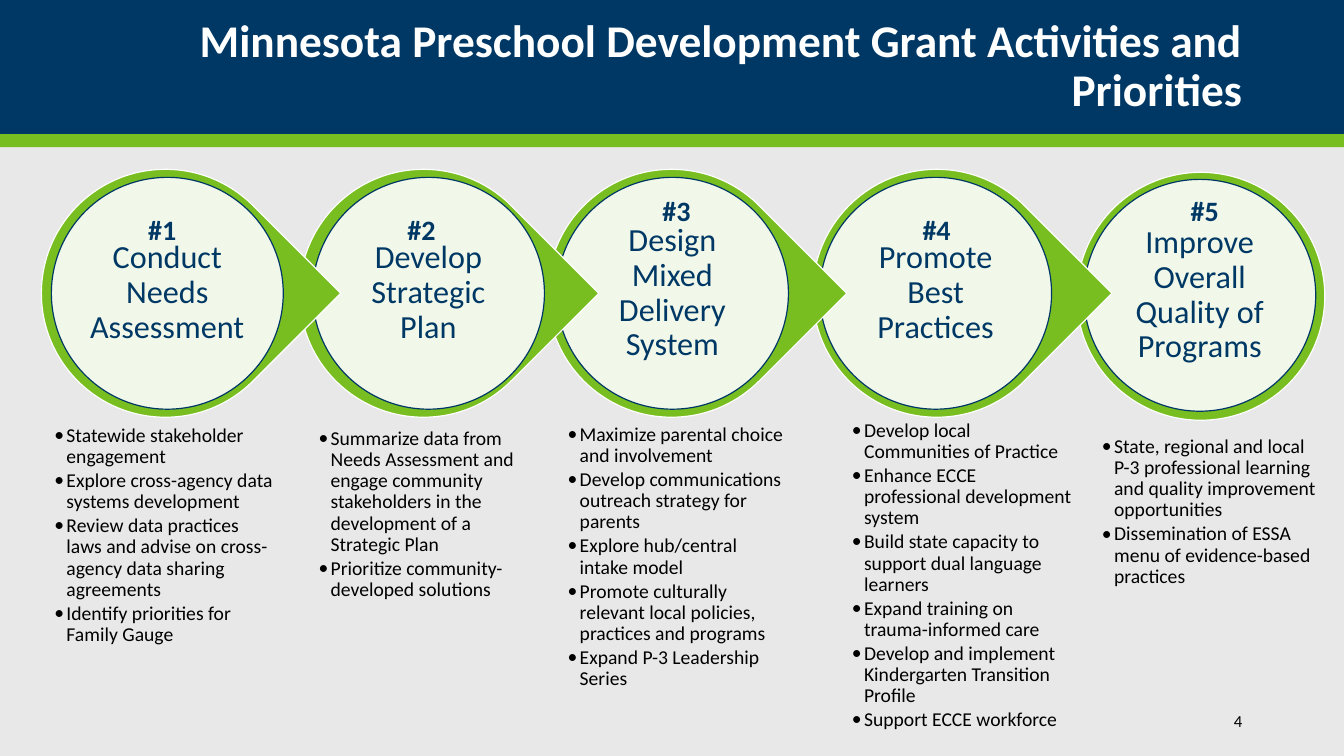
from dataclasses import dataclass

from lxml import etree
from pptx import Presentation
from pptx.dml.color import RGBColor
from pptx.enum import shapes, text
from pptx.oxml import ns
from pptx.util import Inches, Pt


@dataclass(frozen=True)
class Theme:
    font: str = "Calibri"
    navy: RGBColor = RGBColor.from_string("003865")
    green: RGBColor = RGBColor.from_string("78BE21")
    white: RGBColor = RGBColor.from_string("FFFFFF")
    black: RGBColor = RGBColor.from_string("000000")
    background: RGBColor = RGBColor.from_string("E8E8E8")
    title_size: float = 32.4
    label_size: float = 23
    number_size: float = 20
    bullet_size: float = 14
    page_size: float = 12
    outline: float = 0.85


theme = Theme()
presentation = Presentation()
presentation.slide_width = Inches(13.33)
presentation.slide_height = Inches(7.5)
slide = presentation.slides.add_slide(presentation.slide_layouts[5])
slide.background.fill.solid()
slide.background.fill.fore_color.rgb = theme.background


def add_filled(preset, left, top, width, height, fill, line=None):
    shape = slide.shapes.add_shape(
        preset, Inches(left), Inches(top), Inches(width), Inches(height))
    shape.shadow.inherit = False
    shape.fill.solid()
    shape.fill.fore_color.rgb = fill
    if line is None:
        shape.line.fill.background()
    else:
        shape.line.color.rgb = line
        shape.line.width = Pt(theme.outline)
    return shape


def write_text(shape, lines, size, color, bold=False, margins=(0.1, 0.05),
               anchor=text.MSO_ANCHOR.TOP, **paragraph_format):
    frame = shape.text_frame
    side, edge = (Inches(margin) for margin in margins)
    frame_format = {
        "word_wrap": True, "auto_size": text.MSO_AUTO_SIZE.NONE,
        "vertical_anchor": anchor, "margin_left": side, "margin_right": side,
        "margin_top": edge, "margin_bottom": edge,
    }
    for name, value in frame_format.items():
        setattr(frame, name, value)
    frame.text = "\n".join(lines)
    for paragraph in frame.paragraphs:
        for name, value in paragraph_format.items():
            setattr(paragraph, name, value)
        font = paragraph.runs[0].font
        for name, value in {"name": theme.font, "size": Pt(size), "bold": bold}.items():
            setattr(font, name, value)
        font.color.rgb = color


title = slide.shapes.title
for top, height, color in [(0, 1.33, theme.navy), (1.33, 0.13, theme.green)]:
    band = add_filled(shapes.MSO_SHAPE.RECTANGLE, 0, top, 13.33, height, color)
    title.element.addprevious(band.element)

title_place = {"left": 0.14, "top": 0.17, "width": 12.28, "height": 1}
for name, value in title_place.items():
    setattr(title, name, Inches(value))
write_text(title, ["Minnesota Preschool Development Grant Activities and Priorities"],
           theme.title_size, theme.white, bold=True, anchor=text.MSO_ANCHOR.MIDDLE,
           alignment=text.PP_ALIGN.RIGHT, line_spacing=0.9)

page_number = slide.shapes.add_textbox(Inches(10.82), Inches(6.95), Inches(1.6), Inches(0.4))
write_text(page_number, ["4"], theme.page_size, theme.black,
           anchor=text.MSO_ANCHOR.MIDDLE, alignment=text.PP_ALIGN.RIGHT)

teardrop, oval = shapes.MSO_SHAPE.TEAR, shapes.MSO_SHAPE.OVAL
stages = [
    {"label": "Conduct Needs Assessment", "preset": teardrop, "ring": (0.41, 1.68),
     "disc": (0.51, 1.76), "list": (0.48, 4.16), "number": (1.18, 2.06),
     "bullets": ["Statewide stakeholder engagement",
                 "Explore cross-agency data systems development",
                 "Review data practices laws and advise on cross-agency data sharing agreements",
                 "Identify priorities for Family Gauge"]},
    {"label": "Develop Strategic Plan", "preset": teardrop, "ring": (2.97, 1.68),
     "disc": (3.1, 1.76), "list": (3.1, 4.19), "number": (3.75, 2.06),
     "bullets": ["Summarize data from Needs Assessment and engage community stakeholders "
                 "in the development of a Strategic Plan",
                 "Prioritize community-developed solutions"]},
    {"label": "Design Mixed Delivery System", "preset": teardrop, "ring": (5.43, 1.68),
     "disc": (5.52, 1.76), "list": (5.57, 4.15), "number": (6.28, 1.87),
     "bullets": ["Maximize parental choice and involvement",
                 "Develop communications outreach strategy for parents",
                 "Explore hub/central intake model",
                 "Promote culturally relevant local policies, practices and programs",
                 "Expand P-3 Leadership Series"]},
    {"label": "Promote Best Practices", "preset": teardrop, "ring": (8.06, 1.68),
     "disc": (8.13, 1.76), "list": (8.39, 4.11), "number": (8.86, 2.06),
     "bullets": ["Develop local Communities of Practice",
                 "Enhance ECCE professional development system",
                 "Build state capacity to support dual language learners",
                 "Expand training on trauma-informed care",
                 "Develop and implement Kindergarten Transition Profile",
                 "Support ECCE workforce"]},
    {"label": "Improve Overall Quality of Programs", "preset": oval, "ring": (10.68, 1.71),
     "disc": (10.75, 1.78), "list": (10.87, 4.27), "number": (11.52, 1.87),
     "bullets": ["State, regional and local P-3 professional learning and quality "
                 "improvement opportunities",
                 "Dissemination of ESSA menu of evidence-based practices"]},
]

for stage in reversed(stages):
    ring = add_filled(stage["preset"], *stage["ring"], 2.46, 2.46, theme.green, theme.white)
    ring.rotation = 45 if stage["preset"] == teardrop else 0

    disc = add_filled(oval, *stage["disc"], 2.3, 2.3, theme.white, theme.navy)
    disc_color = disc.element.spPr.find(ns.qn("a:solidFill"))[0]
    etree.SubElement(disc_color, ns.qn("a:alpha"), val="90000")

    left, top = (Inches(offset + 0.33) for offset in stage["disc"])
    label = slide.shapes.add_textbox(left, top, Inches(1.64), Inches(1.64))
    write_text(label, [stage["label"]], theme.label_size, theme.navy, margins=(0.03, 0.03),
               anchor=text.MSO_ANCHOR.MIDDLE, alignment=text.PP_ALIGN.CENTER, line_spacing=0.9)

    left, top = map(Inches, stage["list"])
    activities = slide.shapes.add_textbox(left, top, Inches(2.3), Inches(1.35))
    write_text(activities, stage["bullets"], theme.bullet_size, theme.black,
               margins=(0.06, 0.06), line_spacing=0.9, space_after=Pt(2))
    for properties in activities.element.iter(ns.qn("a:pPr")):
        properties.set("marL", str(Inches(0.12)))
        properties.set("indent", str(-Inches(0.12)))
        bullet_font = etree.SubElement(properties, ns.qn("a:buFont"))
        bullet_font.set("typeface", theme.font)
        etree.SubElement(properties, ns.qn("a:buChar"), char="•")

for index, stage in enumerate(stages, start=1):
    left, top = map(Inches, stage["number"])
    number = slide.shapes.add_textbox(left, top, Inches(0.86), Inches(0.44))
    write_text(number, [f"#{index}"], theme.number_size, theme.navy, bold=True,
               alignment=text.PP_ALIGN.CENTER)

presentation.save("out.pptx")
